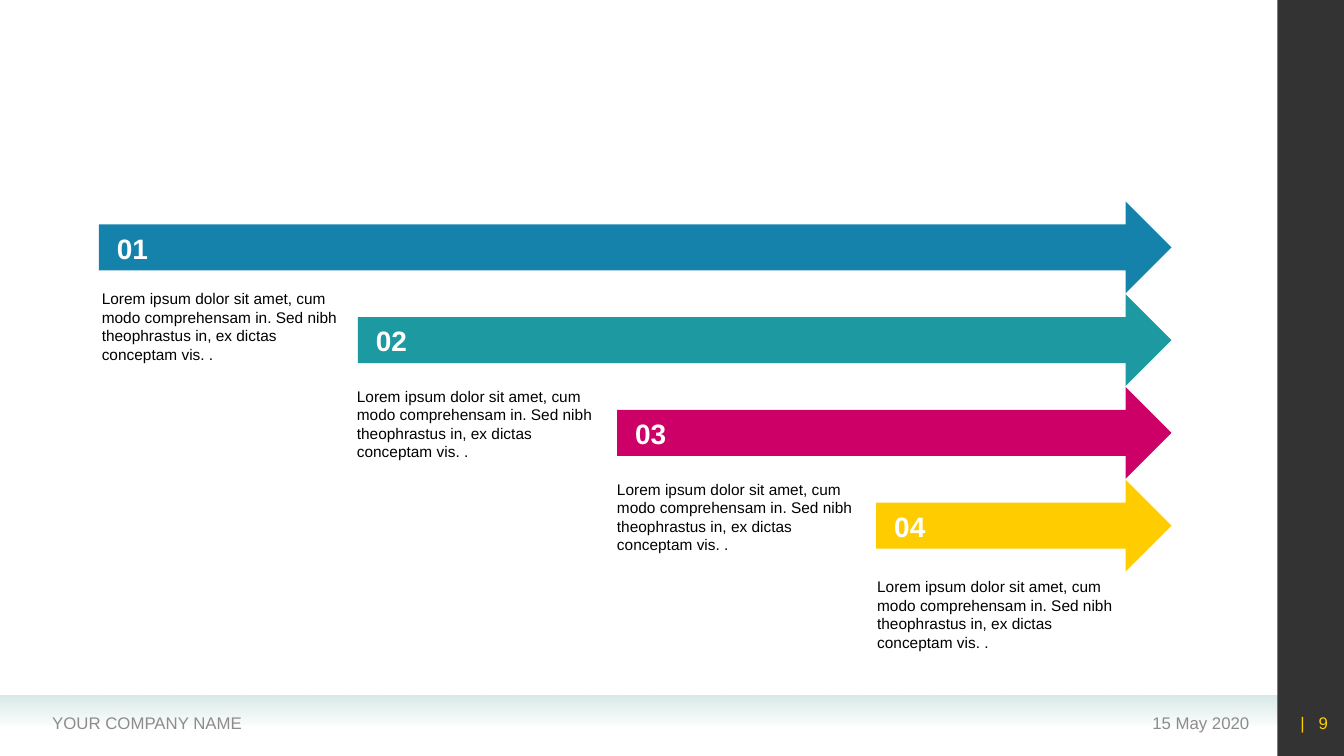
import pptx
import pptx.util
import pptx.oxml
import pptx.oxml.ns
from pptx.dml.color import RGBColor
from pptx.enum.shapes import MSO_SHAPE
from pptx.enum.text import MSO_ANCHOR, PP_ALIGN

BLACK = RGBColor(0x00, 0x00, 0x00)
WHITE = RGBColor(0xFF, 0xFF, 0xFF)
GRAY = RGBColor(0x8C, 0x8C, 0x8C)
MIST = RGBColor(0xD9, 0xE9, 0xE8)
BLUE = RGBColor(0x14, 0x82, 0xAB)
TEAL = RGBColor(0x1D, 0x9A, 0xA1)
PINK = RGBColor(0xCC, 0x00, 0x66)
YELLOW = RGBColor(0xFF, 0xCC, 0x00)

BODY = ("Lorem ipsum dolor sit amet, cum modo comprehensam in. "
        "Sed nibh theophrastus in, ex dictas conceptam vis. .")
STEPS = [
    ("01", BLUE, BODY, (90, 282)),
    ("02", TEAL, BODY, (343, 379)),
    ("03", PINK, BODY, (601, 471)),
    ("04", YELLOW, BODY, (859, 568)),
]
FOOTERS = [
    ("15 May 2020", 910, 339, PP_ALIGN.RIGHT, GRAY),
    ("YOUR COMPANY NAME", 42, 490, PP_ALIGN.LEFT, GRAY),
    ("|   9", 1260, 67, PP_ALIGN.RIGHT, YELLOW),
]

SLIDE_WIDTH, SLIDE_HEIGHT = 1333, 750
SIDEBAR_LEFT = 1267
ARROW_LEFT, ARROW_TOP, ARROW_RIGHT, ARROW_HEIGHT = 98, 200, 1162, 91
STEP_X, STEP_Y = 257, 92
FONT = "Arial"


def px(value):
    return pptx.util.Emu(value * 9144)


def add_shape(slide, kind, left, top, width, height):
    shape = slide.shapes.add_shape(kind, px(left), px(top), px(width), px(height))
    shape.shadow.inherit = False
    shape.line.fill.background()
    return shape


def fill_solid(shape, color):
    shape.fill.solid()
    shape.fill.fore_color.rgb = color


def set_opacity(shape, index, percent):
    colors = list(shape._element.spPr.iter(pptx.oxml.ns.qn("a:srgbClr")))
    alpha = pptx.oxml.parse_xml(
        f'<a:alpha {pptx.oxml.ns.nsdecls("a")} val="{percent * 1000}"/>')
    colors[index].append(alpha)


def add_text(slide, text, left, top, width, height, size, color, bold=False,
             align=PP_ALIGN.LEFT, anchor=MSO_ANCHOR.MIDDLE, space_before=0):
    box = slide.shapes.add_textbox(px(left), px(top), px(width), px(height))
    frame = box.text_frame
    frame.word_wrap = True
    frame.vertical_anchor = anchor
    paragraph = frame.paragraphs[0]
    paragraph.alignment = align
    paragraph.space_before = pptx.util.Pt(space_before)
    run = paragraph.add_run()
    run.text = text
    run.font.name = FONT
    run.font.size = pptx.util.Pt(size)
    run.font.bold = bold
    run.font.color.rgb = color
    return frame


def add_frame(slide):
    band = add_shape(slide, MSO_SHAPE.RECTANGLE, 0, 690, SIDEBAR_LEFT, 31)
    band.fill.gradient()
    band.fill.gradient_angle = 270
    for stop, position in zip(band.fill.gradient_stops, (0, 1)):
        stop.color.rgb = MIST
        stop.position = position
    set_opacity(band, 1, 0)

    sidebar = add_shape(slide, MSO_SHAPE.RECTANGLE, SIDEBAR_LEFT, 0,
                        SLIDE_WIDTH - SIDEBAR_LEFT, SLIDE_HEIGHT)
    fill_solid(sidebar, BLACK)
    set_opacity(sidebar, 0, 80)

    for text, left, width, align, color in FOOTERS:
        add_text(slide, text, left, 697, width, 40, 12, color, align=align)


def add_steps(slide):
    for index, (number, color, body, (body_left, body_top)) in enumerate(STEPS):
        left = ARROW_LEFT + index * STEP_X
        top = ARROW_TOP + index * STEP_Y
        arrow = add_shape(slide, MSO_SHAPE.RIGHT_ARROW, left, top,
                          ARROW_RIGHT - left, ARROW_HEIGHT)
        fill_solid(arrow, color)
        add_text(slide, number, left + 8, top + 24, 108, 44, 20, WHITE, bold=True)
        frame = add_text(slide, body, body_left, body_top, 256, 85, 11, BLACK,
                         anchor=MSO_ANCHOR.TOP, space_before=2.2)
        frame.margin_left = frame.margin_right = px(11)


def main():
    presentation = pptx.Presentation()
    presentation.slide_width = px(SLIDE_WIDTH)
    presentation.slide_height = px(SLIDE_HEIGHT)
    slide = presentation.slides.add_slide(presentation.slide_layouts[6])
    add_frame(slide)
    add_steps(slide)
    presentation.save("out.pptx")


if __name__ == "__main__":
    main()
